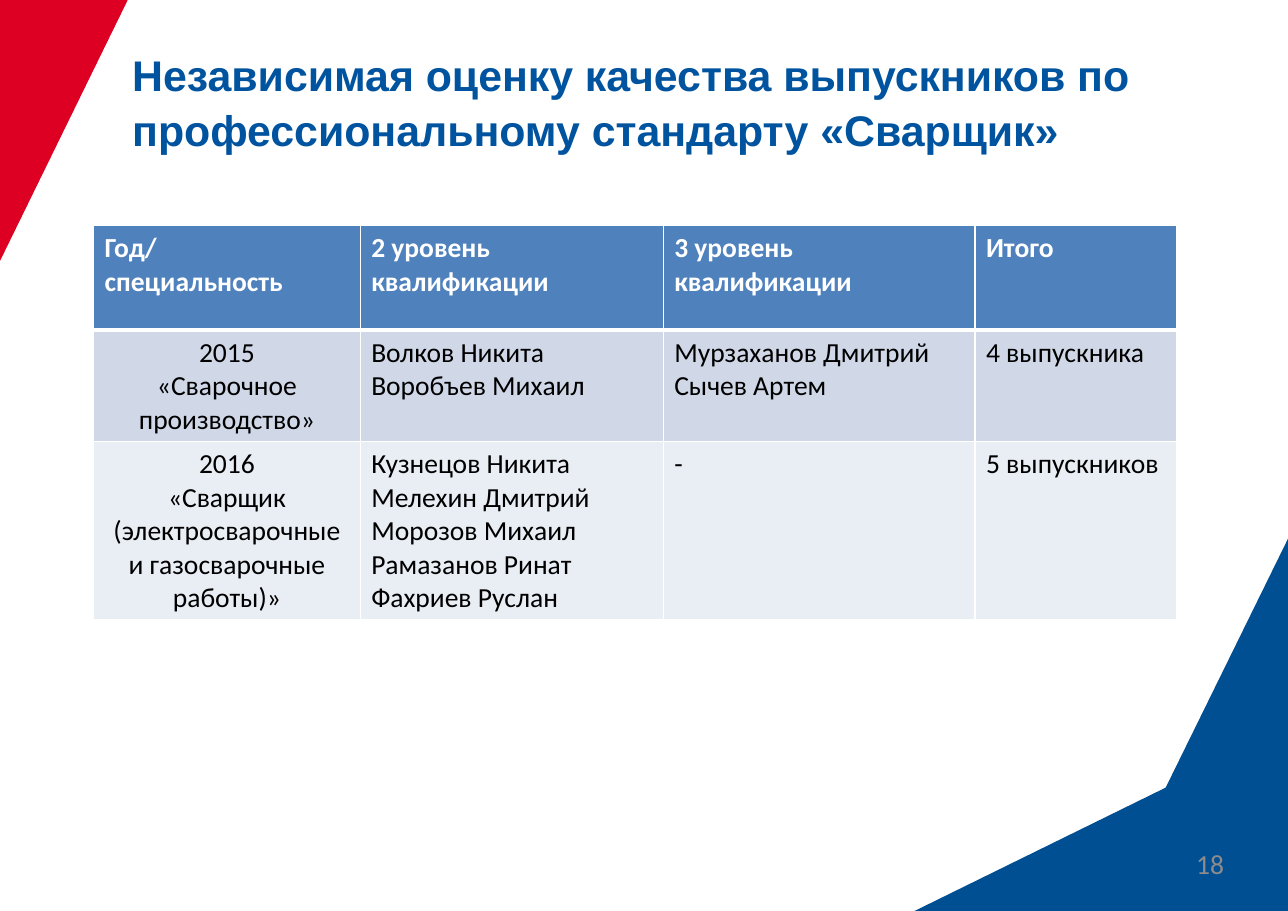
"""Builds the slide on the independent assessment of welding graduates."""
from dataclasses import dataclass

from lxml import etree
from pptx import Presentation
from pptx.dml.color import RGBColor
from pptx.enum.text import MSO_ANCHOR, PP_ALIGN
from pptx.oxml.ns import qn
from pptx.util import Pt

LEFT, CENTER, RIGHT = PP_ALIGN.LEFT, PP_ALIGN.CENTER, PP_ALIGN.RIGHT
TOP = MSO_ANCHOR.TOP
PX = 9144


@dataclass(frozen=True)
class Theme:
    red: str = "DD0023"
    blue: str = "004F93"
    title: str = "00549F"
    number: str = "8C8C8C"
    white: str = "FFFFFF"
    black: str = "000000"
    header: str = "4F81BD"
    bands: tuple = ("D0D8E8", "E9EDF4")
    title_font: str = "Arial"
    body_font: str = "Calibri"
    title_size: int = 28
    body_size: int = 18
    thin: int = 1
    thick: int = 3


THEME = Theme()
SLIDE_SIZE = (1169, 827)
TITLE = "Независимая оценку качества выпускников по профессиональному стандарту «Сварщик»"
TITLE_BOX = (120, 41, 930, 94)
NUMBER = "18"
NUMBER_BOX = (842, 769, 269, 41)
CORNERS = [
    (THEME.red, [(0, 0), (116, 0), (0, 237)]),
    (THEME.blue, [(1169, 489), (1058, 715), (830, 827), (1169, 827)]),
]
TABLE_ORIGIN = (85, 205)
COLUMN_WIDTHS = [242, 275, 283, 183]
ROW_HEIGHTS = [95, 101, 162]
ROWS = [
    [["Год/", "специальность"], ["2 уровень квалификации"],
     ["3 уровень квалификации"], ["Итого"]],
    [["2015", "«Сварочное", "производство»"],
     ["Волков Никита", "Воробъев Михаил"],
     ["Мурзаханов Дмитрий", "Сычев Артем"], ["4 выпускника"]],
    [["2016", "«Сварщик (электросварочные и газосварочные работы)»"],
     ["Кузнецов Никита", "Мелехин Дмитрий", "Морозов Михаил",
      "Рамазанов Ринат", "Фахриев Руслан"],
     ["-"], ["5 выпускников"]],
]


def emu(lengths):
    return [length * PX for length in lengths]


def write(frame, lines, *, color, size=THEME.body_size, font=THEME.body_font,
          bold=False, align=LEFT, spacing=1.0):
    frame.word_wrap = True
    for index, line in enumerate(lines):
        para = frame.paragraphs[0] if index == 0 else frame.add_paragraph()
        para.alignment = align
        para.line_spacing = spacing
        span = para.add_run()
        span.text = line
        span.font.name = font
        span.font.size = Pt(size)
        span.font.bold = bold
        span.font.color.rgb = RGBColor.from_string(color)


def remove_insets(frame):
    frame.margin_left = frame.margin_top = frame.margin_right = frame.margin_bottom = 0
    frame.vertical_anchor = TOP


def add_corner(page, color, points):
    builder = page.shapes.build_freeform(*points[0], scale=PX)
    builder.add_line_segments(points[1:], close=True)
    corner = builder.convert_to_shape()
    corner.shadow.inherit = False
    corner.fill.solid()
    corner.fill.fore_color.rgb = RGBColor.from_string(color)
    corner.line.fill.background()


def add_borders(cell, row):
    top = THEME.thick if row == 1 else THEME.thin
    bottom = THEME.thick if row == 0 else THEME.thin
    properties = cell._tc.get_or_add_tcPr()
    for side, width in (("L", THEME.thin), ("R", THEME.thin), ("T", top), ("B", bottom)):
        border = etree.SubElement(properties, qn(f"a:ln{side}"), w=str(Pt(width)))
        fill = etree.SubElement(border, qn("a:solidFill"))
        etree.SubElement(fill, qn("a:srgbClr"), val=THEME.white)


def add_results(page):
    area = emu([*TABLE_ORIGIN, sum(COLUMN_WIDTHS), sum(ROW_HEIGHTS)])
    table = page.shapes.add_table(len(ROWS), len(COLUMN_WIDTHS), *area).table
    for column, width in zip(table.columns, emu(COLUMN_WIDTHS)):
        column.width = width
    for row, height in zip(table.rows, emu(ROW_HEIGHTS)):
        row.height = height
    fills = [THEME.header, *THEME.bands]
    for row, (entries, color) in enumerate(zip(ROWS, fills)):
        is_header = row == 0
        for column, lines in enumerate(entries):
            cell = table.cell(row, column)
            add_borders(cell, row)
            cell.fill.solid()
            cell.fill.fore_color.rgb = RGBColor.from_string(color)
            write(cell.text_frame, lines, bold=is_header,
                  color=THEME.white if is_header else THEME.black,
                  align=CENTER if column == 0 and not is_header else LEFT)


def main():
    deck = Presentation()
    deck.slide_width, deck.slide_height = emu(SLIDE_SIZE)
    page = deck.slides.add_slide(deck.slide_layouts[5])
    for color, points in CORNERS:
        add_corner(page, color, points)

    title = page.shapes.title
    title.left, title.top, title.width, title.height = emu(TITLE_BOX)
    remove_insets(title.text_frame)
    write(title.text_frame, [TITLE], color=THEME.title, size=THEME.title_size,
          font=THEME.title_font, bold=True, spacing=1.07)

    number = page.shapes.add_textbox(*emu(NUMBER_BOX))
    remove_insets(number.text_frame)
    write(number.text_frame, [NUMBER], color=THEME.number, align=RIGHT)

    add_results(page)
    deck.save("out.pptx")


if __name__ == "__main__":
    main()
